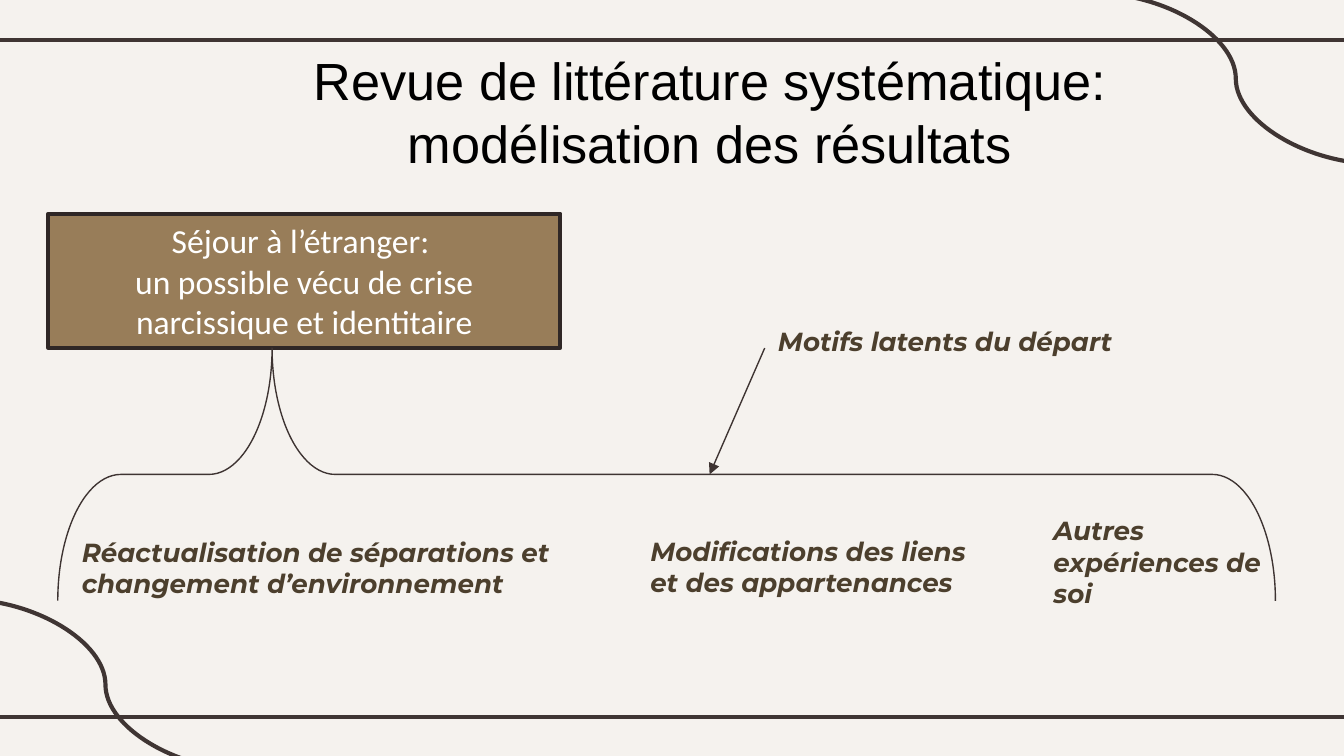
from collections import namedtuple

from lxml.etree import SubElement
from pptx import Presentation
from pptx.dml.color import RGBColor
from pptx.enum.shapes import MSO_CONNECTOR as Link, MSO_SHAPE as Preset
from pptx.enum.text import MSO_ANCHOR as Anchor, PP_ALIGN as Align
from pptx.oxml.ns import qn
from pptx.util import Inches, Pt

CREAM = RGBColor(0xF5, 0xF2, 0xEE)
FRAME_BROWN = RGBColor(0x3F, 0x35, 0x33)
DIAGRAM_BROWN = RGBColor(0x3E, 0x34, 0x32)
CRISIS_FILL = RGBColor(0x98, 0x7D, 0x59)
CRISIS_EDGE = RGBColor(0x2F, 0x27, 0x26)
THEME_BROWN = RGBColor(0x4C, 0x3F, 0x2D)
BLACK = RGBColor(0, 0, 0)
WHITE = RGBColor(0xFF, 0xFF, 0xFF)

TITLE_FORMAT = {"name": "Arial", "size": Pt(28)}
CRISIS_FORMAT = {"name": "Calibri", "size": Pt(18)}
THEME_FORMAT = {"name": "Montserrat", "size": Pt(14), "bold": True, "italic": True}

Box = namedtuple("Box", "left top width height")
PAGE = Box(0, 0, 10, 10 * 9 / 16)


def emu(box):
    return [Inches(length) for length in box]


def write(frame, paragraphs, formats, color, align=Align.LEFT, anchor=Anchor.TOP):
    frame.word_wrap = True
    frame.vertical_anchor = anchor
    for index, words in enumerate(paragraphs):
        paragraph = frame.add_paragraph() if index else frame.paragraphs[0]
        paragraph.alignment = align
        paragraph.text = words
        for run in paragraph.runs:
            for key, value in formats.items():
                setattr(run.font, key, value)
            run.font.color.rgb = color


def add_text(slide, box, words, formats, color, align=Align.LEFT):
    frame = slide.shapes.add_textbox(*emu(box)).text_frame
    for side in ("left", "top", "right", "bottom"):
        setattr(frame, f"margin_{side}", Inches(0.1))
    write(frame, [words], formats, color, align)


def add_link(slide, kind, start, end, color, weight):
    link = slide.shapes.add_connector(kind, *emu(start + end))
    link.line.color.rgb = color
    link.line.width = Pt(weight)
    SubElement(link._element.spPr, qn("a:effectLst"))
    return link


def draw_frame(slide, box):
    right = box.left + box.width
    for y in (box.top + 0.3, box.top + box.height - 0.29):
        add_link(slide, Link.STRAIGHT, (box.left - 0.08, y), (right + 0.08, y), FRAME_BROWN, 2.25)
    for x, y in ((box.left - 0.27, box.top + 4.46), (right - 1.86, box.top - 0.05)):
        add_link(slide, Link.CURVE, (x, y), (x + 2.11, y + 1.27), FRAME_BROWN, 2.25)


def draw_title(slide, box):
    add_text(slide, box, "Revue de littérature systématique:\vmodélisation des résultats",
             TITLE_FORMAT, BLACK, Align.CENTER)


def draw_crisis(slide, box):
    crisis = slide.shapes.add_shape(Preset.RECTANGLE, *emu(box))
    crisis.shadow.inherit = False
    crisis.fill.solid()
    crisis.fill.fore_color.rgb = CRISIS_FILL
    crisis.line.color.rgb = CRISIS_EDGE
    crisis.line.width = Pt(2)
    write(crisis.text_frame,
          ["Séjour à l’étranger: ", "un possible vécu de crise narcissique et identitaire"],
          CRISIS_FORMAT, WHITE, Align.CENTER, Anchor.MIDDLE)


def draw_brace(slide, box):
    upright = Box(box.left + (box.width - box.height) / 2, box.top + (box.height - box.width) / 2,
                  box.height, box.width)
    brace = slide.shapes.add_shape(Preset.RIGHT_BRACE, *emu(upright))
    brace.rotation = 90
    for flip in ("flipH", "flipV"):
        brace._element.spPr.xfrm.set(flip, "1")
    brace.adjustments[0] = 0.25
    brace.adjustments[1] = 0.176
    brace.shadow.inherit = False
    brace.fill.background()
    brace.line.color.rgb = DIAGRAM_BROWN
    brace.line.width = Pt(0.75)


def draw_themes(slide, box):
    themes = (
        ("Réactualisation de séparations et changement d’environnement", 0.08, 1.3, 3.81, 1.06),
        ("Modifications des liens et des appartenances", 4.31, 1.29, 2.71, 0.88),
        ("Autres expériences de soi", 7.31, 1.14, 1.96, 0.88),
    )
    for words, x, y, width, height in themes:
        add_text(slide, Box(box.left + x, box.top + y, width, height), words,
                 THEME_FORMAT, THEME_BROWN)


def draw_motives(slide, box, target):
    add_text(slide, box, "Motifs latents du départ", THEME_FORMAT, THEME_BROWN)
    arrow = add_link(slide, Link.STRAIGHT, (box.left, box.top + 0.27), target, DIAGRAM_BROWN, 0.75)
    SubElement(arrow.line._get_or_add_ln(), qn("a:tailEnd"), type="triangle")


def main():
    deck = Presentation()
    deck.slide_width, deck.slide_height = Inches(PAGE.width), Inches(PAGE.height)
    slide = deck.slides.add_slide(deck.slide_layouts[6])
    slide.background.fill.solid()
    slide.background.fill.fore_color.rgb = CREAM

    span = Box(0.43, 2.59, 9.06, 1.88)
    draw_frame(slide, PAGE)
    draw_title(slide, Box(0.56, 0.26, 9.44, 0.76))
    draw_themes(slide, span)
    draw_crisis(slide, Box(0.36, 1.59, 3.81, 1))
    draw_motives(slide, Box(5.69, 2.32, 3.19, 0.63), (5.28, span.top + span.height / 2))
    draw_brace(slide, span)
    deck.save("out.pptx")


if __name__ == "__main__":
    main()
